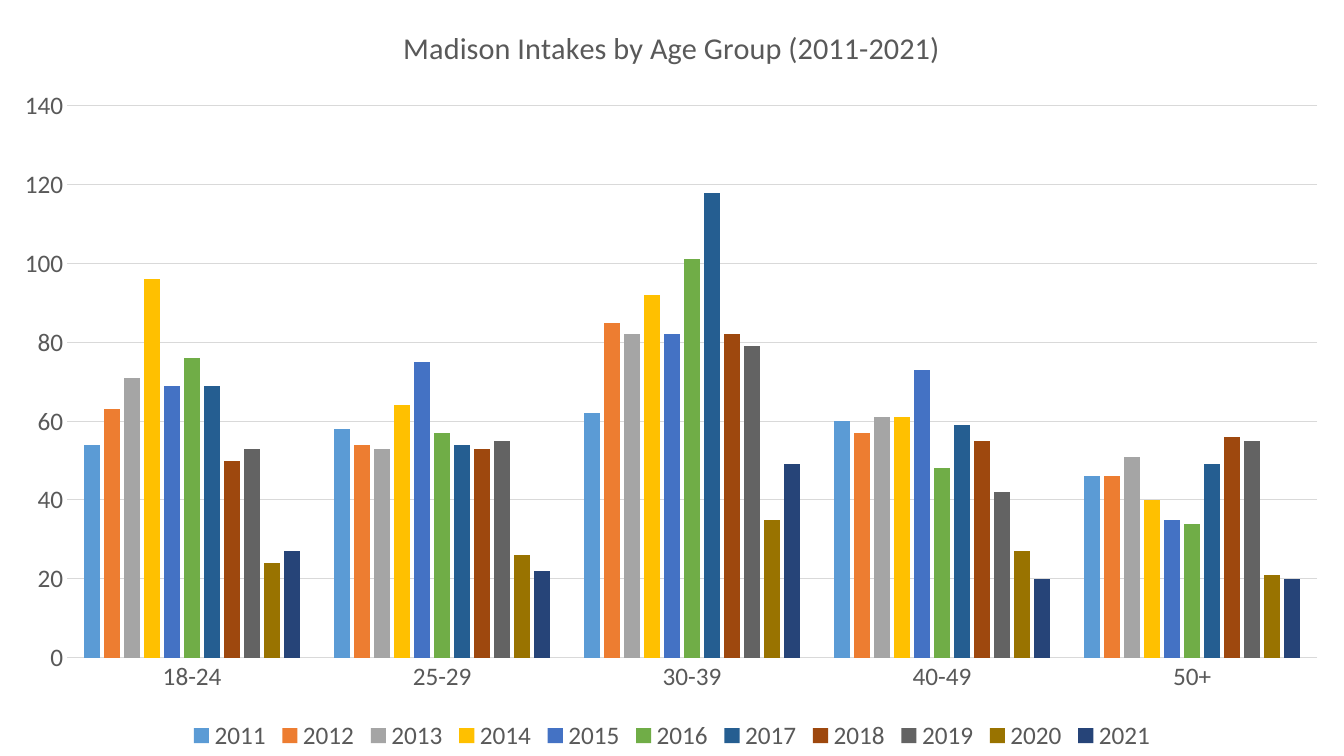
from lxml import etree
from pptx import Presentation
from pptx.chart.data import CategoryChartData
from pptx.dml.color import RGBColor
from pptx.enum.chart import XL_CHART_TYPE, XL_LEGEND_POSITION, XL_TICK_MARK
from pptx.oxml.ns import qn
from pptx.util import Inches, Pt

CLUSTERED = XL_CHART_TYPE.COLUMN_CLUSTERED
BOTTOM = XL_LEGEND_POSITION.BOTTOM
NO_TICK = XL_TICK_MARK.NONE

WIDTH, HEIGHT = 13.33, 7.5
FONT, TEXT, GRID = "Calibri", "595959", "D9D9D9"
TITLE = "Madison Intakes by Age Group (2011-2021)"
AGE_GROUPS = ["18-24", "25-29", "30-39", "40-49", "50+"]
INTAKES = [
    ("2011", "5B9BD5", [54, 58, 62, 60, 46]),
    ("2012", "ED7D31", [63, 54, 85, 57, 46]),
    ("2013", "A5A5A5", [71, 53, 82, 61, 51]),
    ("2014", "FFC000", [96, 64, 92, 61, 40]),
    ("2015", "4472C4", [69, 75, 82, 73, 35]),
    ("2016", "70AD47", [76, 57, 101, 48, 34]),
    ("2017", "255E91", [69, 54, 118, 59, 49]),
    ("2018", "9E480E", [50, 53, 82, 55, 56]),
    ("2019", "636363", [53, 55, 79, 42, 55]),
    ("2020", "997300", [24, 26, 35, 27, 21]),
    ("2021", "264478", [27, 22, 49, 20, 20]),
]


def color(code):
    """Return the colour for a hex string."""
    return RGBColor.from_string(code)


def style_font(font, size):
    """Apply the chart's typeface and text colour at a given size."""
    font.name, font.size, font.bold = FONT, Pt(size), False
    font.color.rgb = color(TEXT)


def style_line(line):
    """Draw a thin grey line."""
    line.color.rgb = color(GRID)
    line.width = Pt(0.75)


def style_axes(chart):
    """Style both axes and the horizontal gridlines."""
    for axis in (chart.category_axis, chart.value_axis):
        axis.major_tick_mark = axis.minor_tick_mark = NO_TICK
        style_font(axis.tick_labels.font, 18)
    style_line(chart.category_axis.format.line)
    values = chart.value_axis
    values.minimum_scale, values.maximum_scale, values.major_unit = 0, 140, 20
    values.format.line.fill.background()
    values.has_major_gridlines = True
    style_line(values.major_gridlines.format.line)


def place_plot(chart, left, top, width, height):
    """Fix the inner plot area, in fractions of the chart."""
    plot_area = chart.plots[0]._element.getparent()
    for old in plot_area.findall(qn("c:layout")):
        plot_area.remove(old)
    layout = etree.Element(qn("c:layout"))
    manual = etree.SubElement(layout, qn("c:manualLayout"))
    settings = [("layoutTarget", "inner"), ("xMode", "edge"), ("yMode", "edge"),
                ("x", left), ("y", top), ("w", width), ("h", height)]
    for name, value in settings:
        etree.SubElement(manual, qn("c:" + name)).set("val", str(value))
    plot_area.insert(0, layout)


def add_intake_chart(page, left, top, width, height):
    """Add the clustered column chart of intakes to the given box."""
    data = CategoryChartData()
    data.categories = AGE_GROUPS
    for year, _, counts in INTAKES:
        data.add_series(year, counts)
    box = [Inches(length) for length in (left, top, width, height)]
    chart = page.shapes.add_chart(CLUSTERED, *box, data).chart
    chart.font.name, chart.font.size = FONT, Pt(18)

    chart.has_title = True
    para = chart.chart_title.text_frame.paragraphs[0]
    para.text = TITLE
    style_font(para.runs[0].font, 21.6)
    chart.chart_title.include_in_layout = False

    chart.has_legend = True
    chart.legend.position = BOTTOM
    chart.legend.include_in_layout = False
    style_font(chart.legend.font, 18)

    plot = chart.plots[0]
    plot.gap_width, plot.overlap, plot.vary_by_categories = 219, -27, False
    for series, (_, fill, _) in zip(plot.series, INTAKES):
        series.format.fill.solid()
        series.format.fill.fore_color.rgb = color(fill)
        series.invert_if_negative = False
    style_axes(chart)
    place_plot(chart, 0.05, 0.14, 0.93, 0.73)


def main():
    """Build the deck and save it."""
    deck = Presentation()
    deck.slide_width, deck.slide_height = Inches(WIDTH), Inches(HEIGHT)
    page = deck.slides.add_slide(deck.slide_layouts[6])
    add_intake_chart(page, 0, 0, WIDTH, HEIGHT)
    deck.save("out.pptx")


if __name__ == "__main__":
    main()
